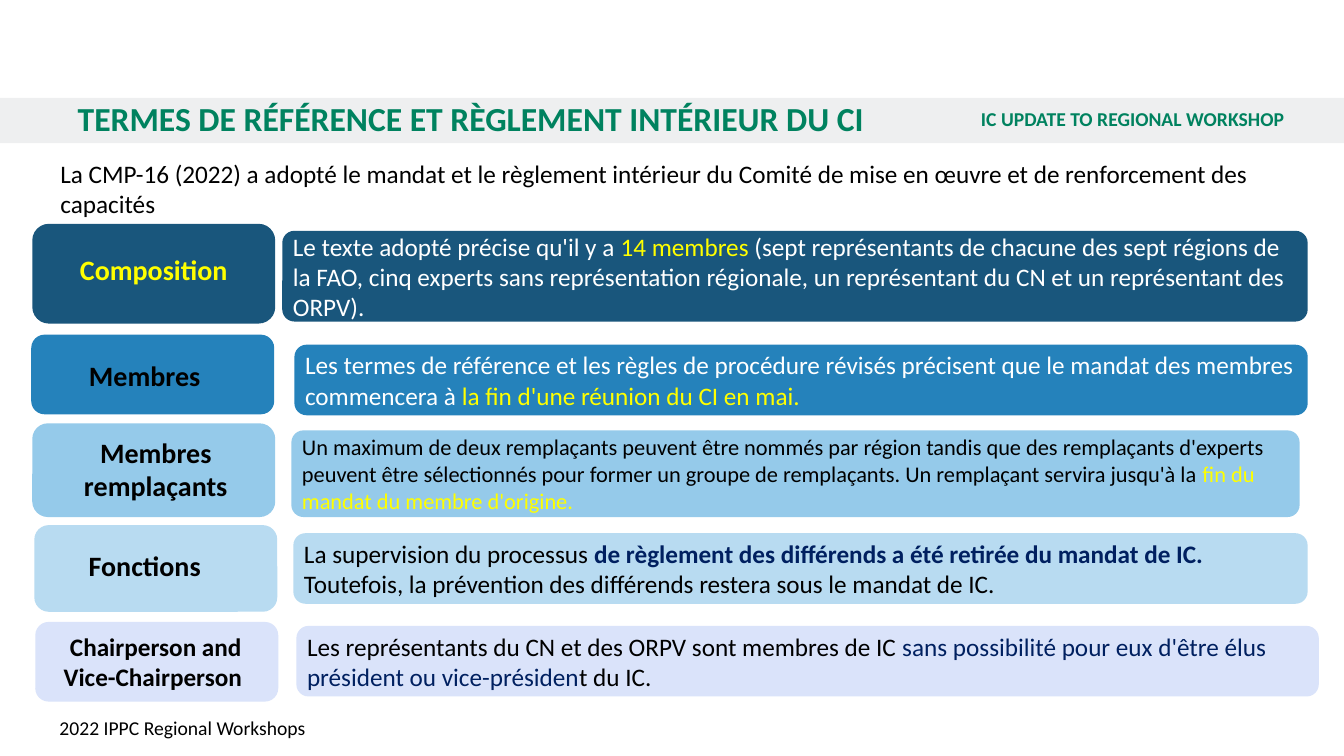
from lxml.etree import SubElement
from pptx import Presentation
from pptx.dml.color import RGBColor
from pptx.enum.shapes import MSO_SHAPE as Preset
from pptx.enum.text import MSO_ANCHOR as Anchor, MSO_AUTO_SIZE as AutoSize, PP_ALIGN as Align
from pptx.oxml.ns import qn
from pptx.util import Inches, Pt

FONT = "Calibri"
BLACK = RGBColor(0x00, 0x00, 0x00)
WHITE = RGBColor(0xFF, 0xFF, 0xFF)
YELLOW = RGBColor(0xFF, 0xFF, 0x00)
NAVY = RGBColor(0x00, 0x20, 0x60)
GREEN = RGBColor(0x00, 0x82, 0x5F)
BANNER_GREY = RGBColor(0xD8, 0xD9, 0xDC)
DEEP_BLUE = RGBColor(0x19, 0x56, 0x7C)
BLUE = RGBColor(0x25, 0x82, 0xBB)
SKY = RGBColor(0x95, 0xCA, 0xEA)
PALE_BLUE = RGBColor(0xB8, 0xDB, 0xF1)
LAVENDER = RGBColor(0xDA, 0xE3, 0xFA)

TILE_WIDTH = 2.41
PANEL_RADIUS = 0.12
# A rounded rectangle already insets its text by 0.29 of the radius.
PANEL_INSETS = (0.07, 0.02, 0.07, 0.02)
WIDE_INSETS = (0.59, 0.05, 0.59, 0.05)

# fill, tile (left, top, height), label (text, left, top, height, size, colour),
# panel (left, top, width, height), panel size, runs (text, colour, bold)
ROWS = [
    (DEEP_BLUE, (0.32, 2.22, 0.99), ("Composition", 0.32, 2.46, 0.44, 20, YELLOW),
     (2.8, 2.29, 10.17, 0.9), 18,
     [("Le texte adopté précise qu'il y a ", WHITE, False),
      ("14 membres ", YELLOW, False),
      ("(sept représentants de chacune des sept régions de la FAO, cinq experts sans "
       "représentation régionale, un représentant du CN et un représentant des ORPV).",
       WHITE, False)]),
    (BLUE, (0.31, 3.32, 0.79), ("Membres", 0.23, 3.51, 0.44, 20, BLACK),
     (2.92, 3.42, 10.05, 0.7), 18,
     [("Les termes de référence et les règles de procédure révisés précisent que le "
       "mandat des membres commencera à ", WHITE, False),
      ("la fin d'une réunion du CI en mai.", YELLOW, False)]),
    (SKY, (0.32, 4.2, 0.93), ("Membres remplaçants", 0.34, 4.27, 0.77, 20, BLACK),
     (2.89, 4.27, 10, 0.86), 16,
     [("Un maximum de deux remplaçants peuvent être nommés par région tandis que des "
       "remplaçants d'experts peuvent être sélectionnés pour former un groupe de "
       "remplaçants. Un remplaçant servira jusqu'à la ", BLACK, False),
      ("fin du mandat du membre d'origine.", YELLOW, False)]),
    (PALE_BLUE, (0.34, 5.21, 0.86), ("Fonctions", 0.23, 5.39, 0.44, 20, BLACK),
     (2.91, 5.29, 10.06, 0.7), 18,
     [("La supervision du processus ", BLACK, False),
      ("de règlement des différends a été retirée du mandat de IC. ", NAVY, True),
      ("Toutefois, la prévention des différends restera sous le mandat de IC.",
       BLACK, False)]),
    (LAVENDER, (0.35, 6.17, 0.79),
     ("Chairperson and Vice-Chairperson ", 0.34, 6.21, 0.71, 18, BLACK),
     (2.94, 6.21, 10.14, 0.7), 18,
     [("Les représentants du CN et des ORPV sont membres de IC ", BLACK, False),
      ("sans possibilité pour eux d'être élus président ou vice-présiden", NAVY, False),
      ("t du IC.", BLACK, False)]),
]


def write(shape, runs, size=18, align=Align.LEFT, anchor=Anchor.TOP,
          insets=(0.1, 0.05, 0.1, 0.05), line_spacing=None):
    """Fill a shape with one paragraph of (text, colour, bold) runs."""
    frame = shape.text_frame
    frame.word_wrap = True
    frame.auto_size = AutoSize.NONE
    frame.vertical_anchor = anchor
    (frame.margin_left, frame.margin_top,
     frame.margin_right, frame.margin_bottom) = map(Inches, insets)
    paragraph = frame.paragraphs[0]
    paragraph.alignment = align
    paragraph.line_spacing = line_spacing
    for text, colour, bold in runs:
        run = paragraph.add_run()
        run.text = text
        run.font.name = FONT
        run.font.size = Pt(size)
        run.font.bold = bold
        run.font.color.rgb = colour


class WorkshopSlide:
    def __init__(self, presentation):
        self.slide = presentation.slides.add_slide(presentation.slide_layouts[5])

    def block(self, preset, box, fill, alpha=None, radius=None):
        shape = self.slide.shapes.add_shape(preset, *map(Inches, box))
        shape.shadow.inherit = False
        shape.fill.solid()
        shape.fill.fore_color.rgb = fill
        shape.line.fill.background()
        if alpha is not None:
            colour = shape.element.spPr.find(".//" + qn("a:srgbClr"))
            SubElement(colour, qn("a:alpha"), val=str(alpha * 1000))
        if radius is not None:
            shape.adjustments[0] = radius / min(box[2:])
        return shape

    def text(self, box, runs, **text_format):
        write(self.slide.shapes.add_textbox(*map(Inches, box)), runs, **text_format)

    def title(self, box, text, behind):
        """Place the title just in front of the shape behind it."""
        title = self.slide.shapes.title
        title.left, title.top, title.width, title.height = map(Inches, box)
        write(title, [(text, GREEN, True)], size=24,
              insets=(0.59, 0, 0.39, 0.05), line_spacing=0.9)
        behind.element.addnext(title.element)

    def row(self, fill, tile, label, panel, size, runs):
        left, top, height = tile
        self.block(Preset.ROUNDED_RECTANGLE, (left, top, TILE_WIDTH, height), fill)
        text, left, top, height, label_size, colour = label
        self.text((left, top, TILE_WIDTH, height), [(text, colour, True)],
                  size=label_size, align=Align.CENTER)
        shape = self.block(Preset.ROUNDED_RECTANGLE, panel, fill, radius=PANEL_RADIUS)
        write(shape, runs, size=size, anchor=Anchor.MIDDLE, insets=PANEL_INSETS)


def main():
    presentation = Presentation()
    presentation.slide_width = Inches(13.33)
    presentation.slide_height = Inches(7.5)
    page = WorkshopSlide(presentation)

    banner = page.block(Preset.RECTANGLE, (0, 0.97, 13.33, 0.45), BANNER_GREY, alpha=42)
    write(banner, [("IC UPDATE TO REGIONAL WORKSHOP", GREEN, True)], size=14,
          align=Align.RIGHT, anchor=Anchor.MIDDLE, insets=WIDE_INSETS, line_spacing=0.9)
    page.title((0.18, 1.02, 8.9, 0.44),
               "TERMES DE RÉFÉRENCE ET RÈGLEMENT INTÉRIEUR DU CI", behind=banner)
    page.text((0.5, 1.52, 12.31, 0.71),
              [("La CMP-16 (2022) a adopté le mandat et le règlement intérieur du Comité "
                "de mise en œuvre et de renforcement des capacités", BLACK, False)])
    for row in ROWS:
        page.row(*row)
    page.text((0, 7.06, 13.33, 0.35), [("2022 IPPC Regional Workshops", BLACK, False)],
              size=14, anchor=Anchor.MIDDLE, insets=WIDE_INSETS, line_spacing=0.9)

    presentation.save("out.pptx")


if __name__ == "__main__":
    main()
